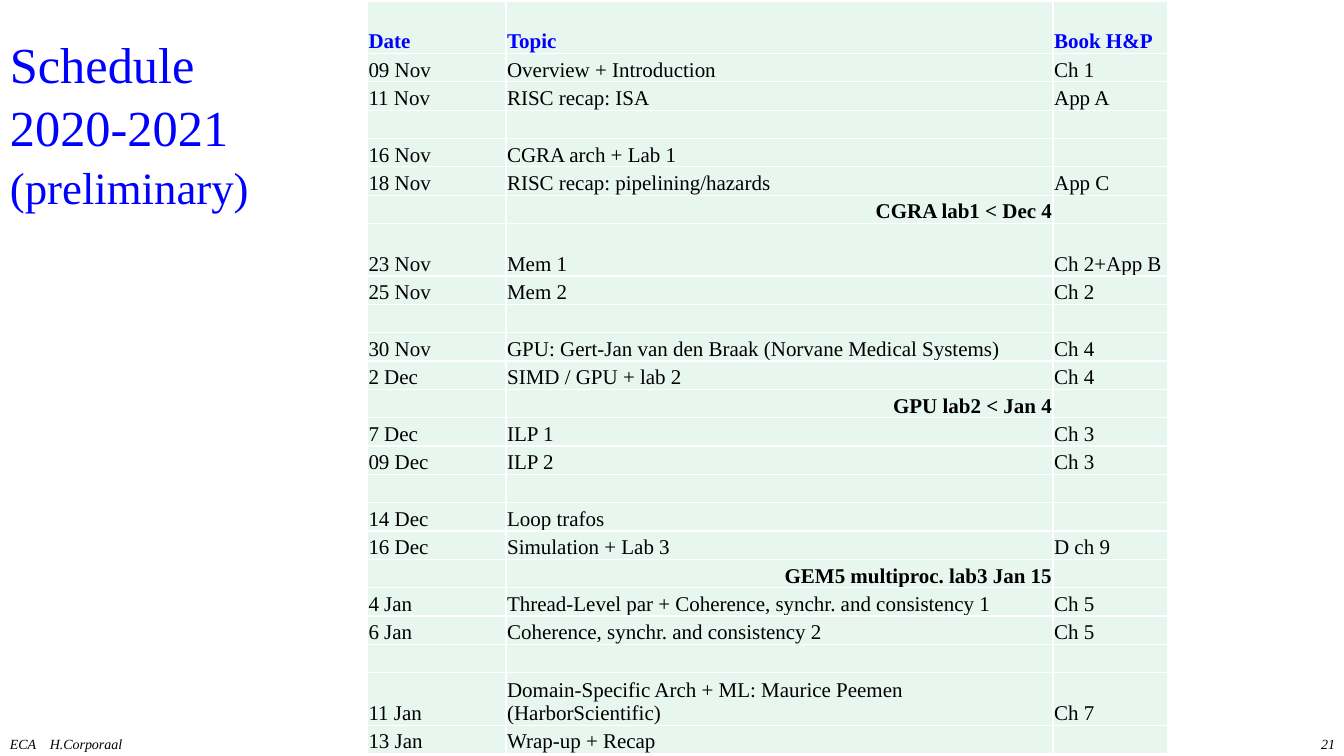
from dataclasses import dataclass

from lxml import etree
from pptx import Presentation, util as u
from pptx.dml.color import RGBColor
from pptx.enum import text
from pptx.oxml.ns import qn

BLUE = RGBColor(0x00, 0x00, 0xFF)
BLACK = RGBColor(0x00, 0x00, 0x00)
MINT = RGBColor(0xE7, 0xF6, 0xEF)
WHITE = RGBColor(0xFF, 0xFF, 0xFF)
FONT = "Times New Roman"
TABLE_SIZE = 15
ROW_HEIGHT, TALL_ROW_HEIGHT = 27, 50
COLUMN_WIDTHS = (132, 521, 109)
RIGHT = text.PP_ALIGN.RIGHT


def px(length: int) -> u.Emu:
    return u.Emu(length * 9525)


@dataclass(frozen=True)
class Entry:
    date: str = ""
    topic: str = ""
    book: str = ""
    tall: bool = False
    deadline: bool = False
    header: bool = False


WEEK_BREAK = Entry()
SCHEDULE = (
    Entry("Date", "Topic", "Book H&P", tall=True, header=True),
    Entry("09 Nov", "Overview + Introduction", "Ch 1"),
    Entry("11 Nov", "RISC recap: ISA", "App A"),
    WEEK_BREAK,
    Entry("16 Nov", "CGRA arch + Lab 1"),
    Entry("18 Nov", "RISC recap: pipelining/hazards", "App C"),
    Entry(topic="CGRA lab1 < Dec 4", deadline=True),
    Entry("23 Nov", "Mem 1", "Ch 2+App B", tall=True),
    Entry("25 Nov", "Mem 2", "Ch 2"),
    WEEK_BREAK,
    Entry("30 Nov", "GPU: Gert-Jan van den Braak (Norvane Medical Systems)", "Ch 4"),
    Entry("2 Dec", "SIMD / GPU + lab 2", "Ch 4"),
    Entry(topic="GPU lab2 < Jan 4", deadline=True),
    Entry("7 Dec", "ILP 1", "Ch 3"),
    Entry("09 Dec", "ILP 2", "Ch 3"),
    WEEK_BREAK,
    Entry("14 Dec", "Loop trafos"),
    Entry("16 Dec", "Simulation + Lab 3", "D ch 9"),
    Entry(topic="GEM5 multiproc. lab3 Jan 15", deadline=True),
    Entry("4 Jan", "Thread-Level par + Coherence, synchr. and consistency 1", "Ch 5"),
    Entry("6 Jan", "Coherence, synchr. and consistency 2", "Ch 5"),
    WEEK_BREAK,
    Entry("11 Jan", "Domain-Specific Arch + ML: Maurice Peemen (HarborScientific)",
          "Ch 7", tall=True),
    Entry("13 Jan", "Wrap-up + Recap"),
)


def write(paragraph, content: str, *, size: int, color: RGBColor = BLACK,
          bold: bool = False, italic: bool = False, align=text.PP_ALIGN.LEFT) -> None:
    paragraph.alignment = align
    run = paragraph.add_run()
    run.text = content
    run.font.name = FONT
    run.font.size = u.Pt(size)
    run.font.bold = bold
    run.font.italic = italic
    run.font.color.rgb = color


def add_text_box(slide, left: int, top: int, width: int, height: int,
                 anchor=text.MSO_ANCHOR.TOP):
    """Add a wrapping text box and return its first paragraph."""
    frame = slide.shapes.add_textbox(px(left), px(top), px(width), px(height)).text_frame
    frame.word_wrap = True
    frame.vertical_anchor = anchor
    return frame.paragraphs[0]


def add_borders(cell) -> None:
    properties = cell._tc.get_or_add_tcPr()
    for side in ("lnL", "lnR", "lnT", "lnB"):
        line = etree.SubElement(properties, qn(f"a:{side}"), w=str(u.Pt(1)))
        fill = etree.SubElement(line, qn("a:solidFill"))
        etree.SubElement(fill, qn("a:srgbClr"), val=str(WHITE))


def fill_cell(cell, content: str, entry: Entry) -> None:
    add_borders(cell)
    cell.fill.solid()
    cell.fill.fore_color.rgb = MINT
    cell.margin_left = cell.margin_right = cell.margin_top = px(1)
    cell.margin_bottom = px(0)
    cell.vertical_anchor = text.MSO_ANCHOR.BOTTOM
    paragraph = cell.text_frame.paragraphs[0]
    if content:
        write(paragraph, content, size=TABLE_SIZE,
              color=BLUE if entry.header else BLACK,
              bold=entry.header or entry.deadline,
              align=RIGHT if entry.deadline else text.PP_ALIGN.LEFT)
    else:
        # Keeps an empty row as low as a written one
        etree.SubElement(paragraph._p, qn("a:endParaRPr"), sz=str(TABLE_SIZE * 100))


def add_title(slide) -> None:
    title = add_text_box(slide, 0, 16, 288, 200, text.MSO_ANCHOR.MIDDLE)
    title.line_spacing = 1.05
    for line, size in (("Schedule ", 36), ("2020-2021 ", 36)):
        write(title, line, size=size, color=BLUE)
        title.add_line_break()
    write(title, "(preliminary)", size=32, color=BLUE)


def add_footer(slide) -> None:
    course = add_text_box(slide, 0, 696, 267, 24)
    write(course, "ECA\tH.Corporaal", size=10, italic=True)
    tabs = etree.SubElement(course._p.get_or_add_pPr(), qn("a:tabLst"))
    etree.SubElement(tabs, qn("a:tab"), pos=str(px(38)), algn="l")
    number = add_text_box(slide, 1014, 696, 267, 24)
    write(number, "21", size=10, italic=True, align=RIGHT)


def add_schedule(slide) -> None:
    heights = [TALL_ROW_HEIGHT if entry.tall else ROW_HEIGHT for entry in SCHEDULE]
    table = slide.shapes.add_table(
        len(SCHEDULE), len(COLUMN_WIDTHS), px(350), px(1),
        px(sum(COLUMN_WIDTHS)), px(sum(heights))).table
    table.first_row = table.horz_banding = False
    for column, width in zip(table.columns, COLUMN_WIDTHS):
        column.width = px(width)
    for row, height, entry in zip(table.rows, heights, SCHEDULE):
        row.height = px(height)
        for cell, content in zip(row.cells, (entry.date, entry.topic, entry.book)):
            fill_cell(cell, content, entry)


def main() -> None:
    presentation = Presentation()
    presentation.slide_width, presentation.slide_height = px(1280), px(720)
    slide = presentation.slides.add_slide(presentation.slide_layouts[6])
    add_title(slide)
    add_footer(slide)
    add_schedule(slide)
    presentation.save("out.pptx")


if __name__ == "__main__":
    main()
